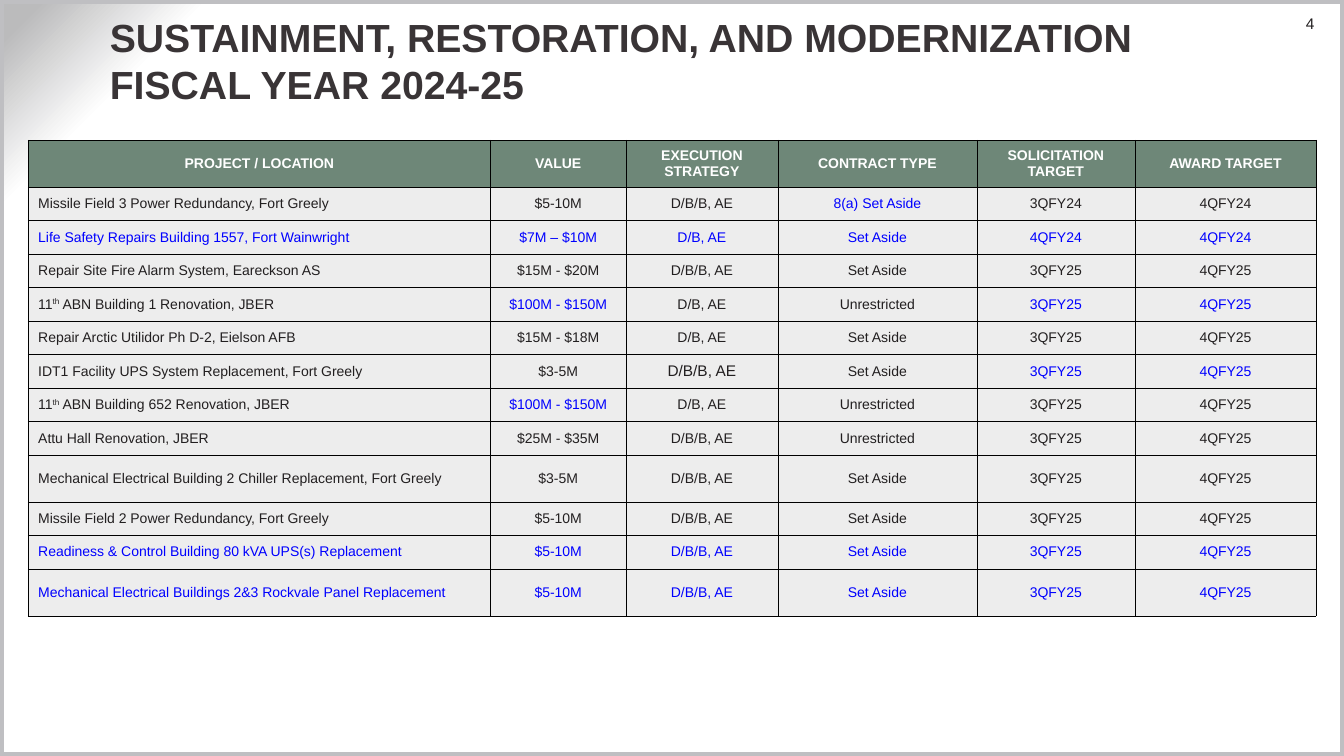
import lxml.etree
import pptx
import pptx.dml.color
import pptx.enum.shapes
import pptx.enum.text
import pptx.oxml
import pptx.util

Pt = pptx.util.Pt
RGBColor = pptx.dml.color.RGBColor
ALIGN = pptx.enum.text.PP_ALIGN
MIDDLE = pptx.enum.text.MSO_ANCHOR.MIDDLE
NS = 'xmlns:a="http://schemas.openxmlformats.org/drawingml/2006/main"'

WHITE = RGBColor(0xFF, 0xFF, 0xFF)
BLACK = RGBColor(0x00, 0x00, 0x00)
CORNER_GREY = RGBColor(0xBB, 0xBB, 0xBC)
FRAME_GREY = RGBColor(0xBF, 0xBF, 0xC2)
TITLE_GREY = RGBColor(0x39, 0x34, 0x36)
INK = RGBColor(0x22, 0x1F, 0x20)
BLUE = RGBColor(0x00, 0x00, 0xFF)
HEADER_GREEN = RGBColor(0x6E, 0x87, 0x78)
ROW_GREY = RGBColor(0xED, 0xED, 0xED)


def style(paragraph, size, color, bold=False, align=ALIGN.LEFT):
    paragraph.alignment = align
    paragraph.font.name = "Arial"
    paragraph.font.size = Pt(size)
    paragraph.font.color.rgb = color
    paragraph.font.bold = bold


def add_text(text, left, top, width, height, inset_left, inset_right):
    frame = slide.shapes.add_textbox(Pt(left), Pt(top), Pt(width), Pt(height)).text_frame
    frame.word_wrap = True
    frame.margin_left, frame.margin_right = Pt(inset_left), Pt(inset_right)
    frame.margin_top = frame.margin_bottom = 0
    frame.text = text
    return frame


deck = pptx.Presentation()
deck.slide_width, deck.slide_height = Pt(960), Pt(540)
slide = deck.slides.add_slide(deck.slide_layouts[6])

backdrop = slide.background.fill
backdrop.gradient()
gradient = slide.background._cSld.bg.bgPr.find(pptx.oxml.ns.qn("a:gradFill"))
stops = "".join(
    f'<a:gs pos="{position}000"><a:srgbClr val="{color}"/></a:gs>'
    for position, color in [(87, WHITE), (90, WHITE), (98, CORNER_GREY)]
)
gradient.getparent().replace(gradient, pptx.oxml.parse_xml(
    f'<a:gradFill {NS} rotWithShape="1"><a:gsLst>{stops}</a:gsLst>'
    '<a:path path="circle"><a:fillToRect l="100000" t="100000"/></a:path></a:gradFill>'
))

page_number = add_text("4", 895.7, 10.1, 43.2, 13.7, 7.2, 0)
style(page_number.paragraphs[0], 11, INK, align=ALIGN.RIGHT)

frame = slide.shapes.add_shape(
    pptx.enum.shapes.MSO_SHAPE.RECTANGLE, 0, 0, deck.slide_width, deck.slide_height)
frame.shadow.inherit = False
frame.fill.background()
frame.line.color.rgb = FRAME_GREY
frame.line.width = Pt(6)

title = add_text(
    "SUSTAINMENT, RESTORATION, AND MODERNIZATION\vFISCAL YEAR 2024-25",
    74.9, 10.1, 817.9, 65.5, 3.6, 3.6)
title.vertical_anchor = MIDDLE
style(title.paragraphs[0], 28, TITLE_GREY, bold=True)

headings = ["PROJECT / LOCATION", "VALUE", "EXECUTION STRATEGY", "CONTRACT TYPE",
            "SOLICITATION TARGET", "AWARD TARGET"]
ALL_COLUMNS = range(len(headings))
projects = [
    ("Missile Field 3 Power Redundancy, Fort Greely",
     "$5-10M", "D/B/B, AE", "8(a) Set Aside", "3QFY24", "4QFY24"),
    ("Life Safety Repairs Building 1557, Fort Wainwright",
     "$7M – $10M", "D/B, AE", "Set Aside", "4QFY24", "4QFY24"),
    ("Repair Site Fire Alarm System, Eareckson AS",
     "$15M - $20M", "D/B/B, AE", "Set Aside", "3QFY25", "4QFY25"),
    ("11^th^ ABN Building 1 Renovation, JBER",
     "$100M - $150M", "D/B, AE", "Unrestricted", "3QFY25", "4QFY25"),
    ("Repair Arctic Utilidor Ph D-2, Eielson AFB",
     "$15M - $18M", "D/B, AE", "Set Aside", "3QFY25", "4QFY25"),
    ("IDT1 Facility UPS System Replacement, Fort Greely",
     "$3-5M", "D/B/B, AE", "Set Aside", "3QFY25", "4QFY25"),
    ("11^th^ ABN Building 652 Renovation, JBER",
     "$100M - $150M", "D/B, AE", "Unrestricted", "3QFY25", "4QFY25"),
    ("Attu Hall Renovation, JBER",
     "$25M - $35M", "D/B/B, AE", "Unrestricted", "3QFY25", "4QFY25"),
    ("Mechanical Electrical Building 2 Chiller Replacement, Fort Greely",
     "$3-5M", "D/B/B, AE", "Set Aside", "3QFY25", "4QFY25"),
    ("Missile Field 2 Power Redundancy, Fort Greely",
     "$5-10M", "D/B/B, AE", "Set Aside", "3QFY25", "4QFY25"),
    ("Readiness & Control Building 80 kVA UPS(s) Replacement",
     "$5-10M", "D/B/B, AE", "Set Aside", "3QFY25", "4QFY25"),
    ("Mechanical Electrical Buildings 2&3 Rockvale Panel Replacement",
     "$5-10M", "D/B/B, AE", "Set Aside", "3QFY25", "4QFY25"),
]
blue_columns = {1: [3], 2: ALL_COLUMNS, 4: [1, 4, 5], 6: [4, 5], 7: [1],
                11: ALL_COLUMNS, 12: ALL_COLUMNS}
larger_cell = (6, 2)
tall_rows = [0, 9, 12]
column_widths = [330.2, 96.8, 108.6, 142.1, 112.9, 129.5]

schedule = slide.shapes.add_table(
    len(projects) + 1, len(headings), Pt(20.1), Pt(100.1), Pt(920.1), Pt(339.8)).table
for column, width in zip(schedule.columns, column_widths):
    column.width = Pt(width)

for row, texts in enumerate([headings] + projects):
    schedule.rows[row].height = Pt(33.5 if row in tall_rows else 23.93)
    for column, text in enumerate(texts):
        cell = schedule.cell(row, column)
        cell.vertical_anchor = MIDDLE
        for side in ["lnL", "lnR", "lnT", "lnB"]:
            cell._tc.get_or_add_tcPr().append(pptx.oxml.parse_xml(
                f'<a:{side} {NS} w="{Pt(0.25)}"><a:solidFill>'
                f'<a:srgbClr val="{BLACK}"/></a:solidFill></a:{side}>'))
        cell.fill.solid()
        cell.fill.fore_color.rgb = ROW_GREY if row else HEADER_GREEN
        entry = cell.text_frame.paragraphs[0]
        color = BLUE if column in blue_columns.get(row, []) else INK
        style(entry, 11 if (row, column) == larger_cell else 10, color if row else WHITE,
              bold=row == 0, align=ALIGN.LEFT if row and column == 0 else ALIGN.CENTER)
        for part, words in enumerate(text.split("^")):
            run = entry.add_run()
            run.text = words
            if part % 2:
                run._r.get_or_add_rPr().set("baseline", "30000")

deck.save("out.pptx")
